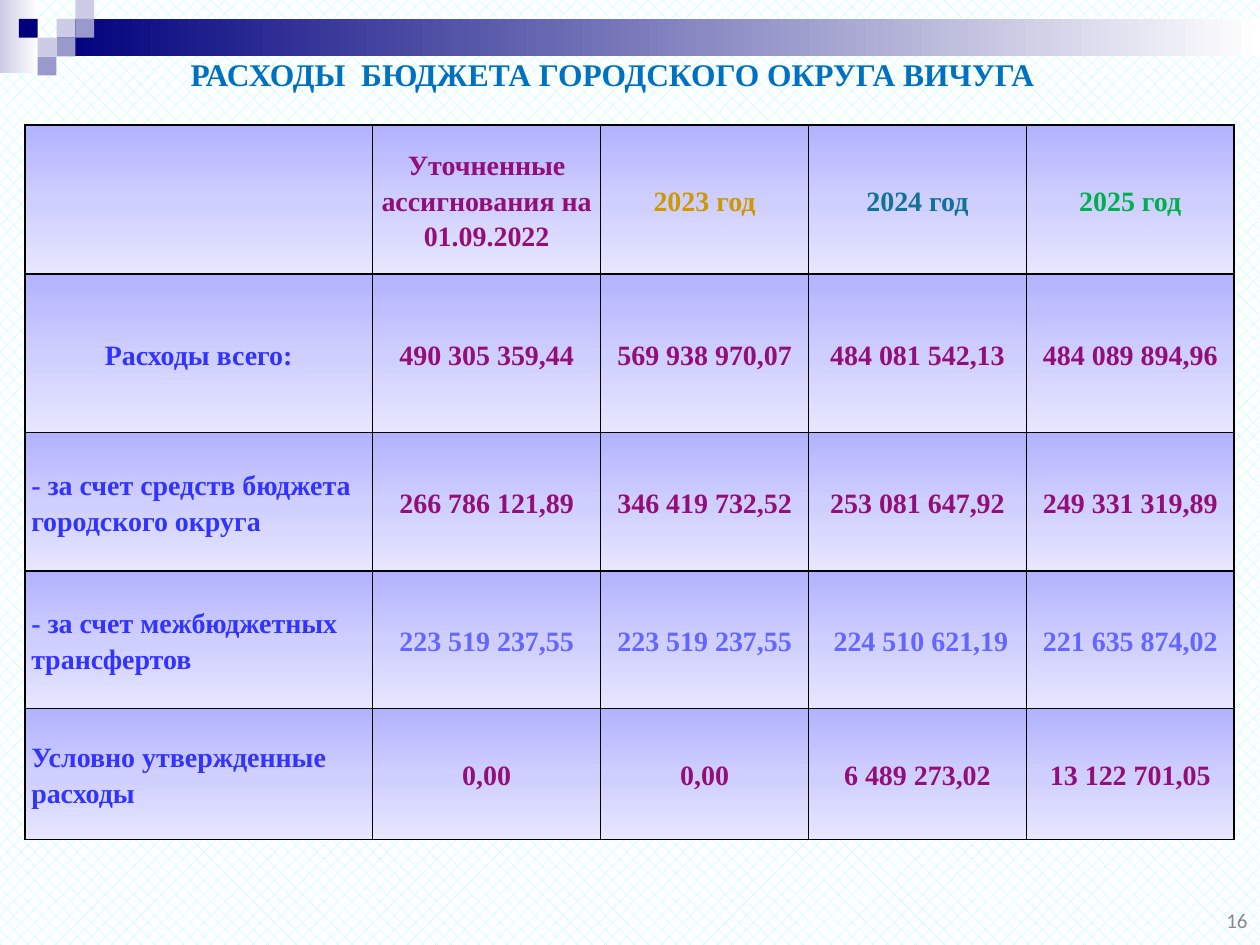
from copy import deepcopy

from pptx import Presentation
from pptx.dml.color import RGBColor
from pptx.enum.dml import MSO_PATTERN
from pptx.enum.shapes import MSO_SHAPE
from pptx.enum.text import MSO_ANCHOR, MSO_AUTO_SIZE, PP_ALIGN
from pptx.oxml import parse_xml
from pptx.oxml.ns import nsdecls, qn
from pptx.util import Cm, Pt

NAVY, LILAC, VIOLET, WHITE = "00007D", "CCCCE6", "9999CC", "FFFFFF"
BLUE, PURPLE, LIGHT = "3333FF", "940E7A", "6565FF"
UNIT = 0.38
SQUARES = [(3, 1, LILAC), (4, 0, LILAC), (4, 1, VIOLET), (2, 2, LILAC),
           (1, 1, NAVY), (3, 2, VIOLET), (2, 3, VIOLET)]
COLS = [7.01, 4.6, 4.19, 4.39, 4.19]
HEIGHTS = [3, 3.2, 2.79, 2.77, 2.64]
ROWS = [
    ["", "Уточненные ассигнования на 01.09.2022", "2023 год", "2024 год", "2025 год"],
    ["Расходы всего:", "490 305 359,44", "569 938 970,07", "484 081 542,13", "484 089 894,96"],
    ["- за счет средств бюджета городского округа",
     "266 786 121,89", "346 419 732,52", "253 081 647,92", "249 331 319,89"],
    ["- за счет межбюджетных трансфертов",
     "223 519 237,55", "223 519 237,55", " 224 510 621,19", "221 635 874,02"],
    ["Условно утвержденные расходы", "0,00", "0,00", "6 489 273,02", "13 122 701,05"],
]
COLORS = [[BLUE, PURPLE, "CC9900", "117295", "00B050"]] + [
    [BLUE] + [c] * 4 for c in (PURPLE, PURPLE, LIGHT, PURPLE)]


def rgb(value):
    return RGBColor.from_string(value)


def write(tf, text, font="Times New Roman", size=16, color=PURPLE, bold=True,
          align=PP_ALIGN.CENTER, spacing=None):
    p = tf.paragraphs[0]
    p.alignment = align
    p.line_spacing = spacing
    f = p.font
    if text:
        r = p.add_run()
        r.text = text
        f = r.font
    f.name, f.size, f.bold = font, Pt(size), bold
    f.color.rgb = rgb(color)


def shade(fill, parent, colors, angle):
    fill.gradient()
    fill.gradient_angle = angle
    stops = parent.find(".//" + qn("a:gsLst"))
    for _ in colors[2:]:
        stops.insert(1, deepcopy(stops[0]))
    for i, (stop, color) in enumerate(zip(fill.gradient_stops, colors)):
        stop.position = i / (len(colors) - 1)
        stop.color.rgb = rgb(color)


class BudgetSlide:
    """Holds the style of the budget deck and the slide being built."""

    cell_colors = ["B2B2FF", "CECEFF", "E6E6FF"]
    border = "000000"

    def __init__(self, prs):
        self.s = prs.slides.add_slide(prs.slide_layouts[5])

    def background(self, fore, back):
        fill = self.s.background.fill
        fill.patterned()
        fill.pattern = MSO_PATTERN.PERCENT_25
        fill.fore_color.rgb, fill.back_color.rgb = rgb(fore), rgb(back)

    def rect(self, x, y, w, h, *colors):
        sp = self.s.shapes.add_shape(MSO_SHAPE.RECTANGLE, Cm(x), Cm(y), Cm(w), Cm(h))
        sp.shadow.inherit = False
        sp.line.fill.background()
        if len(colors) > 1:
            shade(sp.fill, sp.element, colors, 0)
        else:
            sp.fill.solid()
            sp.fill.fore_color.rgb = rgb(colors[0])

    def title(self, text, x, y, w, h):
        sp = self.s.shapes.title
        sp.left, sp.top, sp.width, sp.height = Cm(x), Cm(y), Cm(w), Cm(h)
        tf = sp.text_frame
        tf.word_wrap, tf.auto_size = False, MSO_AUTO_SIZE.SHAPE_TO_FIT_TEXT
        tf.vertical_anchor = MSO_ANCHOR.MIDDLE
        write(tf, text, size=18, color="0070C0")
        sp.element.getparent().append(sp.element)

    def number(self, text, x, y, w, h):
        tf = self.s.shapes.add_textbox(Cm(x), Cm(y), Cm(w), Cm(h)).text_frame
        tf.word_wrap, tf.vertical_anchor = True, MSO_ANCHOR.MIDDLE
        write(tf, text, font="Calibri", size=12, color="898989", bold=False,
              align=PP_ALIGN.RIGHT)

    def cell(self, cell, text, color, align):
        cell.margin_left = cell.margin_right = Cm(0.13)
        cell.margin_top = cell.margin_bottom = 0
        cell.vertical_anchor = MSO_ANCHOR.MIDDLE
        write(cell.text_frame, text, color=color, align=align, spacing=1.15)
        tc_pr = cell._tc.get_or_add_tcPr()
        shade(cell.fill, tc_pr, self.cell_colors, 270)
        for i, side in enumerate("LRTB"):
            tc_pr.insert(i, parse_xml(
                f'<a:ln{side} {nsdecls("a")} w="{Pt(1)}"><a:solidFill>'
                f'<a:srgbClr val="{self.border}"/></a:solidFill></a:ln{side}>'))

    def table(self, x, y):
        tbl = self.s.shapes.add_table(len(ROWS), len(COLS), Cm(x), Cm(y),
                                      Cm(sum(COLS)), Cm(sum(HEIGHTS))).table
        tbl.first_row = tbl.horz_banding = False
        for col, width in zip(tbl.columns, COLS):
            col.width = Cm(width)
        for i, (row, height) in enumerate(zip(tbl.rows, HEIGHTS)):
            row.height = Cm(height)
            for j, cell in enumerate(row.cells):
                left = j == 0 and i > 1
                self.cell(cell, ROWS[i][j], COLORS[i][j],
                          PP_ALIGN.LEFT if left else PP_ALIGN.CENTER)


def main():
    prs = Presentation()
    prs.slide_width, prs.slide_height = Cm(25.4), Cm(19.05)
    slide = BudgetSlide(prs)
    slide.background("9BFFFA", WHITE)
    slide.rect(0, 0, 0.79, 1.47, LILAC, WHITE)
    slide.rect(3 * UNIT, UNIT, 24.26, 2 * UNIT, NAVY, WHITE)
    for col, row, color in SQUARES:
        slide.rect(col * UNIT, row * UNIT, UNIT, UNIT, color)
    slide.number("16", 24.1, 18.03, 1.3, 1.02)
    slide.table(0.5, 2.52)
    slide.title("РАСХОДЫ  БЮДЖЕТА ГОРОДСКОГО ОКРУГА ВИЧУГА", 3.5, 0.97, 17.7, 1.02)
    prs.save("out.pptx")


if __name__ == "__main__":
    main()
